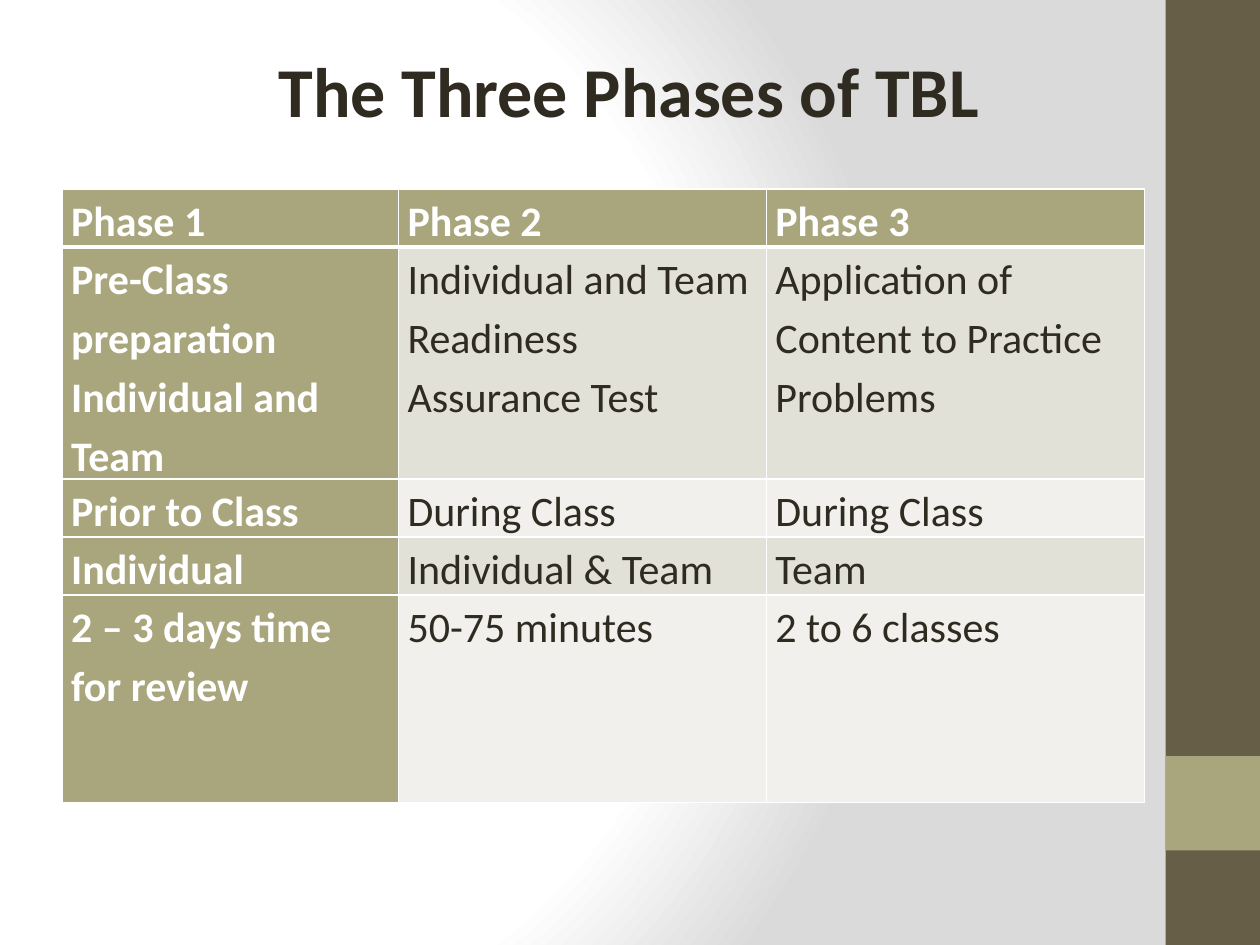
from pptx import Presentation
from pptx.dml.color import RGBColor
from pptx.enum.shapes import MSO_SHAPE
from pptx.enum.text import MSO_AUTO_SIZE, PP_ALIGN
from pptx.oxml import parse_xml
from pptx.oxml.ns import nsdecls
from pptx.util import Inches, Pt

RECTANGLE = MSO_SHAPE.RECTANGLE
GROW = MSO_AUTO_SIZE.SHAPE_TO_FIT_TEXT
CENTER = PP_ALIGN.CENTER

WHITE = RGBColor(0xFF, 0xFF, 0xFF)
GREY = RGBColor(0xDA, 0xDA, 0xDA)
INK = RGBColor(0x2F, 0x2B, 0x20)
BROWN = RGBColor(0x67, 0x5E, 0x47)
OLIVE = RGBColor(0xA9, 0xA5, 0x7C)
BANDS = (RGBColor(0xF1, 0xF0, 0xEC), RGBColor(0xE2, 0xE1, 0xD7))

UNIT = 0.25  # inches per grid step: 40 columns by 30 rows
COLUMNS, ROWS = 40, 30

PHASES = [
    ["Phase 1", "Phase 2", "Phase 3"],
    ["Pre-Class preparation Individual and Team",
     "Individual and Team Readiness Assurance Test",
     "Application of Content to Practice Problems"],
    ["Prior to Class", "During Class", "During Class"],
    ["Individual", "Individual & Team", "Team"],
    ["2 – 3 days time for review", "50-75 minutes", "2 to 6 classes"],
]
PHASE_WIDTHS = [10.68, 11.68, 12]
PHASE_HEIGHTS = [1.68, 7.04, 1.68, 1.68, 6.6]


def grid(*steps):
    return [Inches(step * UNIT) for step in steps]


class SlideBuilder:
    """Holds the shared style and the slide being filled."""

    font = "Calibri"
    title_size = Pt(40)
    table_size = Pt(24)

    def __init__(self, page):
        self.page = page

    def background(self, stops):
        """Radial gradient; stops are (percent, colour) pairs."""
        stop_xml = "".join(
            f'<a:gs pos="{percent * 1000}"><a:srgbClr val="{color}"/></a:gs>'
            for percent, color in stops)
        self.page.element.cSld.insert(0, parse_xml(
            f'<p:bg {nsdecls("p", "a")}><p:bgPr><a:gradFill rotWithShape="1">'
            f'<a:gsLst>{stop_xml}</a:gsLst><a:path path="circle">'
            '<a:fillToRect l="20000" t="50000" r="100000" b="50000"/></a:path>'
            '</a:gradFill><a:effectLst/></p:bgPr></p:bg>'))

    def block(self, place, color):
        shape = self.page.shapes.add_shape(RECTANGLE, *grid(*place))
        shape.shadow.inherit = False
        shape.fill.solid()
        shape.fill.fore_color.rgb = color
        shape.line.fill.background()

    def style(self, para, size, color, bold):
        for span in para.runs:
            span.font.name = self.font
            span.font.size = size
            span.font.bold = bold
            span.font.color.rgb = color

    def title(self, place, text):
        frame = self.page.shapes.add_textbox(*grid(*place)).text_frame
        frame.text = text
        frame.word_wrap = False
        frame.auto_size = GROW
        para = frame.paragraphs[0]
        para.alignment = CENTER
        self.style(para, self.title_size, INK, True)

    def table(self, left, top, widths, heights, rows):
        place = grid(left, top, sum(widths), sum(heights))
        table = self.page.shapes.add_table(len(rows), len(widths), *place).table
        for column, width in zip(table.columns, grid(*widths)):
            column.width = width
        for row, height in zip(table.rows, grid(*heights)):
            row.height = height
        for row_index, texts in enumerate(rows):
            for column_index, text in enumerate(texts):
                heading = row_index == 0 or column_index == 0
                cell = table.cell(row_index, column_index)
                self.cell(cell, text, heading, BANDS[row_index % 2])
                self.borders(cell, top=3 if row_index == 1 else 1,
                             bottom=3 if row_index == 0 else 1)

    def cell(self, cell, text, heading, band):
        cell.margin_left = cell.margin_right = Inches(0.07)
        cell.margin_top = cell.margin_bottom = 0
        cell.fill.solid()
        cell.fill.fore_color.rgb = OLIVE if heading else band
        cell.text_frame.text = text
        para = cell.text_frame.paragraphs[0]
        para.line_spacing = 1.15
        self.style(para, self.table_size, WHITE if heading else INK, heading)

    def borders(self, cell, top, bottom):
        """White edges; top and bottom are widths in points."""
        properties = cell._tc.get_or_add_tcPr()
        edges = (("lnL", 1), ("lnR", 1), ("lnT", top), ("lnB", bottom))
        for position, (edge, width) in enumerate(edges):
            properties.insert(position, parse_xml(
                f'<a:{edge} {nsdecls("a")} w="{Pt(width)}"><a:solidFill>'
                f'<a:srgbClr val="{WHITE}"/></a:solidFill></a:{edge}>'))


def main():
    deck = Presentation()
    deck.slide_width, deck.slide_height = grid(COLUMNS, ROWS)
    builder = SlideBuilder(deck.slides.add_slide(deck.slide_layouts[6]))
    builder.background([(0, WHITE), (75, WHITE), (100, GREY)])
    builder.block((37, 0, 3, ROWS), BROWN)
    builder.block((37, 24, 3, 3), OLIVE)
    builder.title((8.32, 1.32, 23.28, 3.08), "The Three Phases of TBL")
    builder.table(1.98, 6, PHASE_WIDTHS, PHASE_HEIGHTS, PHASES)
    deck.save("out.pptx")


if __name__ == "__main__":
    main()
